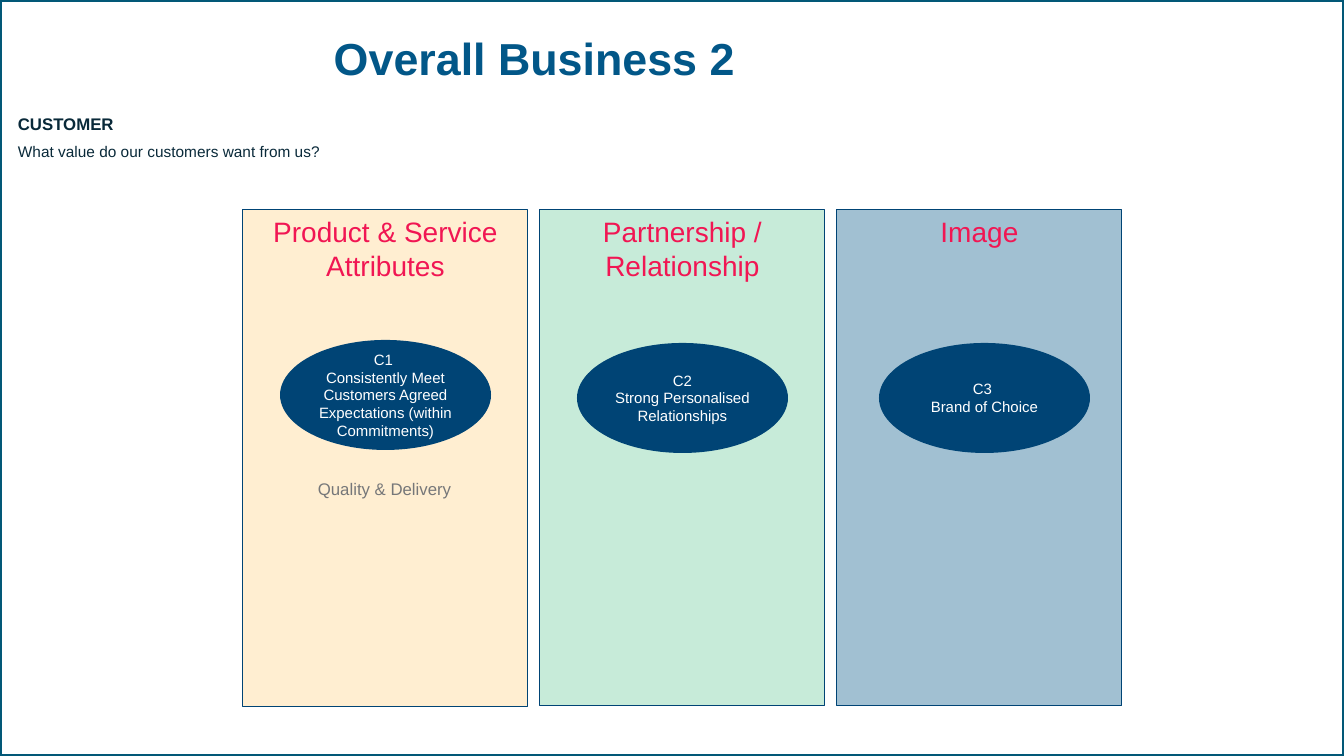
"""Build the customer perspective slide of a strategy map."""
from lxml.etree import SubElement
from pptx import Presentation
from pptx.dml.color import RGBColor
from pptx.enum.shapes import MSO_SHAPE
from pptx.enum.text import MSO_ANCHOR, MSO_AUTO_SIZE, PP_ALIGN
from pptx.oxml.ns import qn
from pptx.util import Pt

PX = 12192000 / 1344
FRAME_BLUE = RGBColor(0x02, 0x58, 0x77)
TITLE_BLUE = RGBColor(0x02, 0x57, 0x88)
NAVY = RGBColor(0x00, 0x44, 0x75)
PINK = RGBColor(0xF1, 0x16, 0x53)
INK = RGBColor(0x09, 0x29, 0x39)
GREY = RGBColor(0x76, 0x77, 0x79)
WHITE = RGBColor(0xFF, 0xFF, 0xFF)
ORANGE = RGBColor(0xFF, 0xAA, 0x1B)
MINT = RGBColor(0xC7, 0xEB, 0xD9)
BLUE = RGBColor(0x00, 0x56, 0x87)


def box(*px, shape=None, fill=None, alpha=100, line=None, weight=0.75):
    place = [round(n * PX) for n in px]
    if shape is None:
        return slide.shapes.add_textbox(*place)
    item = slide.shapes.add_shape(shape, *place)
    item.shadow.inherit = False
    if fill is None:
        item.fill.background()
    else:
        item.fill.solid()
        item.fill.fore_color.rgb = fill
        if alpha < 100:
            colour = item.fill._xPr.find(".//" + qn("a:srgbClr"))
            SubElement(colour, qn("a:alpha"), val=str(alpha * 1000))
    if line is None:
        item.line.fill.background()
    else:
        item.line.color.rgb = line
        item.line.width = Pt(weight)
    return item


def write(item, text, size, colour, bold=False, align=PP_ALIGN.CENTER,
          anchor=MSO_ANCHOR.TOP, wrap=True):
    frame = item.text_frame
    frame.word_wrap = wrap
    frame.vertical_anchor = anchor
    frame.text = text
    for paragraph in frame.paragraphs:
        paragraph.alignment = align
        font = paragraph.font
        font.name, font.size, font.bold = "Arial", Pt(size), bold
        font.color.rgb = colour
    return frame


deck = Presentation()
deck.slide_width, deck.slide_height = round(1344 * PX), round(756 * PX)
slide = deck.slides.add_slide(deck.slide_layouts[6])

box(0, 0, 1344, 756, shape=MSO_SHAPE.RECTANGLE, line=FRAME_BLUE, weight=3)

title = write(box(37, 28, 995, 65), "Overall Business 2", 32, TITLE_BLUE,
              bold=True, anchor=MSO_ANCHOR.MIDDLE)
title.paragraphs[0].line_spacing = 0.9

perspective = write(box(8, 109, 599, 58),
                    "CUSTOMER\nWhat value do our customers want from us?",
                    11, INK, align=PP_ALIGN.LEFT)
perspective.auto_size = MSO_AUTO_SIZE.SHAPE_TO_FIT_TEXT
heading, question = perspective.paragraphs
heading.font.size, heading.font.bold = Pt(12), True
question.space_before = Pt(6)

themes = [
    ("Product & Service Attributes", ORANGE, 20, 497, 280, 340,
     "C1 \vConsistently Meet Customers Agreed Expectations (within Commitments)"),
    ("Partnership / Relationship", MINT, 100, 496, 577, 343,
     "C2\nStrong Personalised Relationships"),
    ("Image", BLUE, 37, 496, 879, 343, "C3 \vBrand of Choice"),
]
for i, (theme, tint, alpha, height, goal_left, goal_top, goal) in enumerate(themes):
    column = box(243 + 297 * i, 210, 285, height, shape=MSO_SHAPE.RECTANGLE,
                 fill=tint, alpha=alpha, line=NAVY)
    write(column, theme, 20, PINK)
    oval = box(goal_left, goal_top, 211, 110, shape=MSO_SHAPE.OVAL, fill=NAVY)
    label = write(oval, goal, 10.7, WHITE, anchor=MSO_ANCHOR.MIDDLE)
    label.margin_left = label.margin_right = 0

measure = write(box(308, 474, 155, 30), "Quality & Delivery", 12, GREY,
                align=PP_ALIGN.LEFT, wrap=False)
measure.auto_size = MSO_AUTO_SIZE.SHAPE_TO_FIT_TEXT

deck.save("out.pptx")
